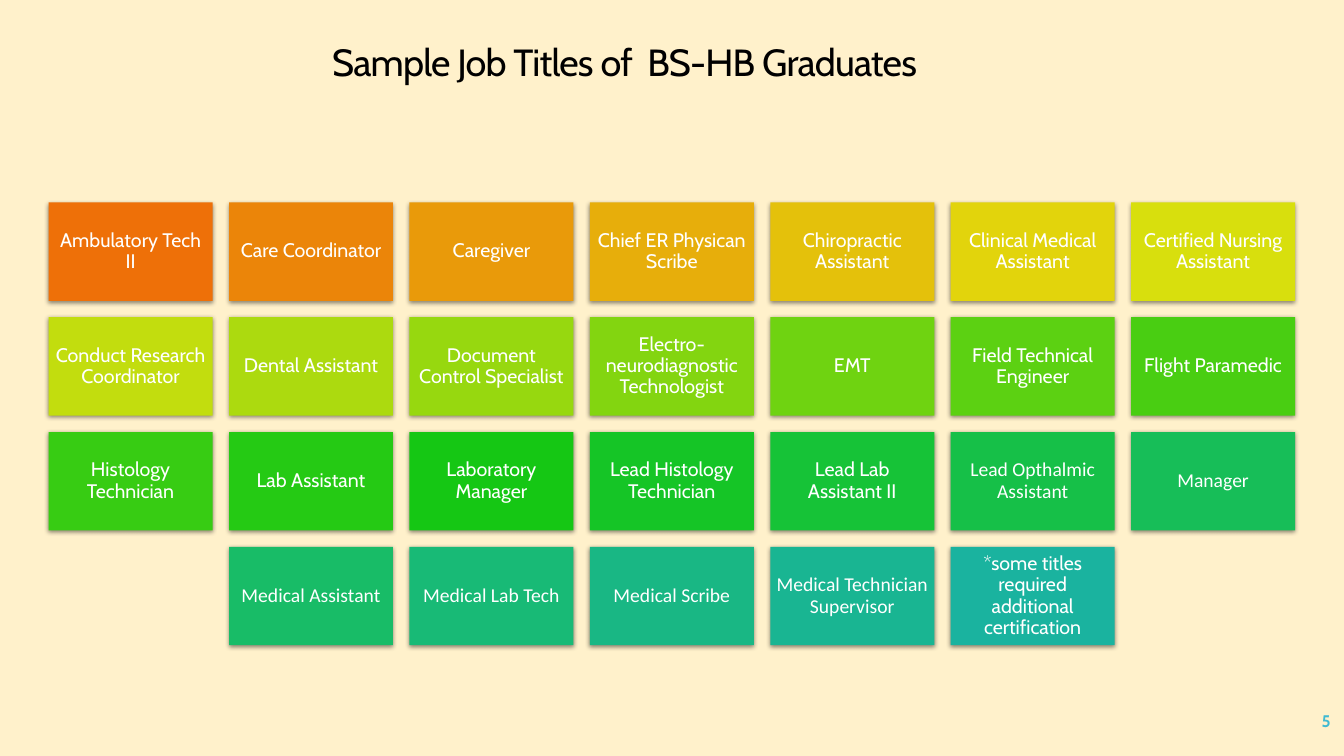
from colorsys import hls_to_rgb, rgb_to_hls

from lxml import etree
from pptx import Presentation
from pptx.dml.color import RGBColor
from pptx.enum.shapes import MSO_SHAPE
from pptx.enum.text import MSO_ANCHOR, PP_ALIGN
from pptx.oxml.ns import qn
from pptx.util import Pt

RECTANGLE = MSO_SHAPE.RECTANGLE
MIDDLE = MSO_ANCHOR.MIDDLE
CENTER, RIGHT = PP_ALIGN.CENTER, PP_ALIGN.RIGHT

COLORS = {
    "background": "FFF1CB",
    "title": "000000",
    "page_number": "40BAD2",
    "job": "FFFFFF",
    "first_tile": "EE7008",
    "last_tile": "1AB39F",
    "shadow": "000000",
}
HEADING_FONT, BODY_FONT = "Cabin", "Calibri"
BODY_FONT_JOBS = range(19, 25)
COLUMNS = 7
GAP_RATIO = 0.1
HEIGHT_RATIO = 0.6

JOBS = [
    "Ambulatory Tech II", "Care Coordinator", "Caregiver",
    "Chief ER Physican Scribe", "Chiropractic Assistant",
    "Clinical Medical Assistant", "Certified Nursing Assistant",
    "Conduct Research Coordinator", "Dental Assistant",
    "Document Control Specialist", "Electro-neurodiagnostic Technologist",
    "EMT", "Field Technical Engineer", "Flight Paramedic",
    "Histology Technician", "Lab Assistant", "Laboratory Manager",
    "Lead Histology Technician", "Lead Lab Assistant II",
    "Lead Opthalmic Assistant", "Manager",
    "Medical Assistant", "Medical Lab Tech", "Medical Scribe",
    "Medical Technician Supervisor",
    "*some titles required additional certification",
]

TITLE_FORMAT = {
    "frame": {"vertical_anchor": MIDDLE, "word_wrap": True},
    "paragraph": {"alignment": CENTER, "line_spacing": 0.9},
    "font": {"name": HEADING_FONT, "size": Pt(27)},
}
PAGE_NUMBER_FORMAT = {
    "frame": {"vertical_anchor": MIDDLE, "word_wrap": True},
    "paragraph": {"alignment": RIGHT, "space_after": Pt(6)},
    "font": {"name": HEADING_FONT, "size": Pt(12), "bold": True},
}
JOB_FORMAT = {
    "frame": {
        "vertical_anchor": MIDDLE, "word_wrap": True,
        "margin_left": Pt(4.2), "margin_right": Pt(4.2),
        "margin_top": Pt(4.2), "margin_bottom": Pt(4.2),
    },
    "paragraph": {"alignment": CENTER, "line_spacing": 0.9,
                  "space_after": Pt(4.9)},
    "font": {"name": HEADING_FONT, "size": Pt(14)},
}


def write_text(holder, text, formats, color):
    frame = holder.text_frame
    paragraph = frame.paragraphs[0]
    run = paragraph.add_run()
    run.text = text
    targets = {"frame": frame, "paragraph": paragraph, "font": run.font}
    for part, values in formats.items():
        for attribute, value in values.items():
            setattr(targets[part], attribute, value)
    run.font.color.rgb = RGBColor.from_string(COLORS[color])
    return run


def add_shadow(tile):
    effects = etree.SubElement(tile.element.spPr, qn("a:effectLst"))
    shadow = etree.SubElement(
        effects, qn("a:outerShdw"), blurRad=str(Pt(3.5)), dist=str(Pt(1.1)),
        dir="5400000", algn="ctr", rotWithShape="0")
    tint = etree.SubElement(shadow, qn("a:srgbClr"), val=COLORS["shadow"])
    etree.SubElement(tint, qn("a:alpha"), val="45000")


def tile_color(share):
    first, last = (
        rgb_to_hls(*(part / 255 for part in RGBColor.from_string(COLORS[name])))
        for name in ("first_tile", "last_tile"))
    blend = (start + (end - start) * share for start, end in zip(first, last))
    return RGBColor(*(round(part * 255) for part in hls_to_rgb(*blend)))


def add_title(slide, left, top, width, height):
    title = slide.shapes.add_textbox(Pt(left), Pt(top), Pt(width), Pt(height))
    run = write_text(title, "Sample Job Titles of  BS-HB Graduates",
                     TITLE_FORMAT, "title")
    run.font._element.set("spc", "-60")


def add_page_number(slide, left, top, width, height):
    page_number = slide.shapes.add_textbox(
        Pt(left), Pt(top), Pt(width), Pt(height))
    write_text(page_number, "5", PAGE_NUMBER_FORMAT, "page_number")


def add_job_grid(slide, left, top, width):
    tile_width = width / (COLUMNS + (COLUMNS - 1) * GAP_RATIO)
    tile_height = tile_width * HEIGHT_RATIO
    gap = tile_width * GAP_RATIO
    for index, job in enumerate(JOBS):
        row, column = divmod(index, COLUMNS)
        row_count = min(COLUMNS, len(JOBS) - row * COLUMNS)
        column += (COLUMNS - row_count) / 2
        tile = slide.shapes.add_shape(
            RECTANGLE,
            Pt(left + column * (tile_width + gap)),
            Pt(top + row * (tile_height + gap)),
            Pt(tile_width), Pt(tile_height))
        tile.fill.solid()
        tile.fill.fore_color.rgb = tile_color(index / (len(JOBS) - 1))
        tile.line.fill.background()
        add_shadow(tile)
        run = write_text(tile, job, JOB_FORMAT, "job")
        if index in BODY_FONT_JOBS:
            run.font.name = BODY_FONT


def build_job_titles_slide(deck):
    slide = deck.slides.add_slide(deck.slide_layouts[6])
    fill = slide.background.fill
    fill.solid()
    fill.fore_color.rgb = RGBColor.from_string(COLORS["background"])
    add_page_number(slide, 837.4, 500.4, 120.2, 28.8)
    add_title(slide, 0, 28.8, 892, 33.8)
    add_job_grid(slide, 34.7, 144.6, 890.4)


def main():
    deck = Presentation()
    deck.slide_width, deck.slide_height = Pt(960), Pt(540)
    build_job_titles_slide(deck)
    deck.save("out.pptx")


if __name__ == "__main__":
    main()
